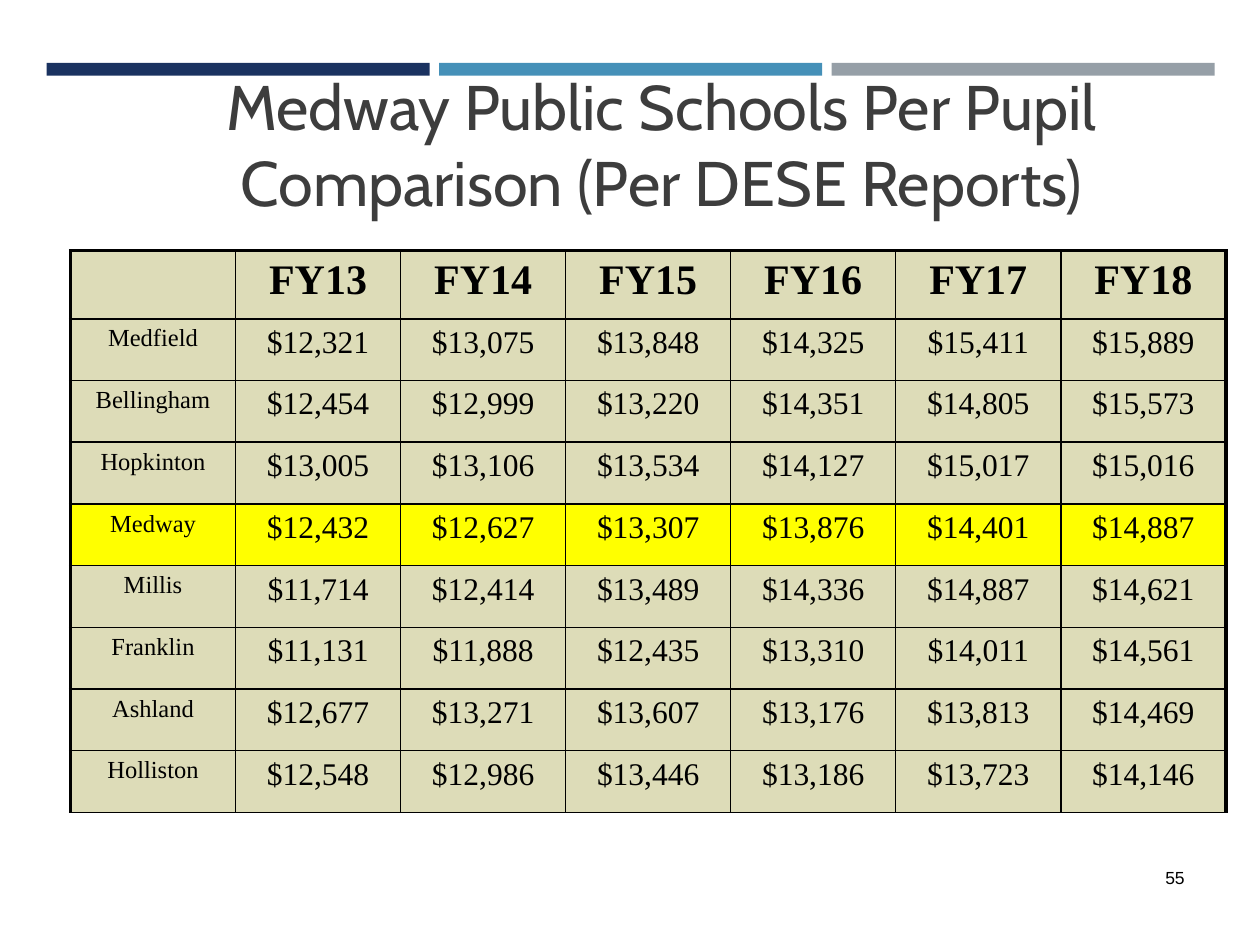
from pptx import Presentation
from pptx.dml.color import RGBColor
from pptx.enum.shapes import MSO_SHAPE
from pptx.enum.text import MSO_ANCHOR, MSO_AUTO_SIZE, PP_ALIGN
from pptx.oxml import parse_xml
from pptx.oxml.ns import nsdecls
from pptx.util import Inches, Pt

COLORS = {
    "navy": "1A3260", "blue": "4590B8", "gray": "969FA7", "title": "3D3D3D",
    "black": "000000", "cell": "DDDCB8", "highlight": "FFFF00",
}
YEARS = ["FY13", "FY14", "FY15", "FY16", "FY17", "FY18"]
SPENDING = {
    "Medfield": [12321, 13075, 13848, 14325, 15411, 15889],
    "Bellingham": [12454, 12999, 13220, 14351, 14805, 15573],
    "Hopkinton": [13005, 13106, 13534, 14127, 15017, 15016],
    "Medway": [12432, 12627, 13307, 13876, 14401, 14887],
    "Millis": [11714, 12414, 13489, 14336, 14887, 14621],
    "Franklin": [11131, 11888, 12435, 13310, 14011, 14561],
    "Ashland": [12677, 13271, 13607, 13176, 13813, 14469],
    "Holliston": [12548, 12986, 13446, 13186, 13723, 14146],
}


class SlideBuilder:
    title_font = "Cabin"
    table_font = "Times New Roman"
    number_font = "Arial"
    thin, thick = 1, 2.25

    def __init__(self, slide):
        self.slide = slide

    def color(self, name):
        return RGBColor.from_string(COLORS[name])

    def set_text(self, frame, text, font, size, color="black",
                 align=PP_ALIGN.CENTER, bold=False):
        paragraph = frame.paragraphs[0]
        paragraph.text = text
        paragraph.alignment = align
        for run in paragraph.runs:
            run.font.name = font
            run.font.size = Pt(size)
            run.font.bold = bold
            run.font.color.rgb = self.color(color)

    def bar(self, left, top, width, height, color):
        bar = self.slide.shapes.add_shape(
            MSO_SHAPE.RECTANGLE, Inches(left), Inches(top), Inches(width), Inches(height))
        bar.shadow.inherit = False
        bar.fill.solid()
        bar.fill.fore_color.rgb = self.color(color)
        bar.line.fill.background()

    def title(self, text, left, top, width, height):
        title = self.slide.shapes.title
        title.left, title.top = Inches(left), Inches(top)
        title.width, title.height = Inches(width), Inches(height)
        frame = title.text_frame
        frame.word_wrap = True
        frame.auto_size = MSO_AUTO_SIZE.NONE
        frame.vertical_anchor = MSO_ANCHOR.MIDDLE
        self.set_text(frame, text, self.title_font, 36, "title")

    def page_number(self, text, left, top, width, height):
        box = self.slide.shapes.add_textbox(
            Inches(left), Inches(top), Inches(width), Inches(height))
        box.text_frame.word_wrap = True
        self.set_text(box.text_frame, text, self.number_font, 10, align=PP_ALIGN.RIGHT)

    def borders(self, cell, widths):
        properties = cell._tc.get_or_add_tcPr()
        for side, width in zip("LRTB", widths):
            properties.append(parse_xml(
                f'<a:ln{side} {nsdecls("a")} w="{Pt(width)}"><a:solidFill>'
                f'<a:srgbClr val="{COLORS["black"]}"/></a:solidFill></a:ln{side}>'))

    def table(self, rows, left, top, column_width, header_height, row_height, highlight):
        row_count, column_count = len(rows), len(rows[0])
        table = self.slide.shapes.add_table(
            row_count, column_count, Inches(left), Inches(top),
            Inches(column_width * column_count),
            Inches(header_height + row_height * (row_count - 1))).table
        table.first_row = table.horz_banding = False
        for column in table.columns:
            column.width = Inches(column_width)
        for r, values in enumerate(rows):
            is_header = r == 0
            table.rows[r].height = Inches(header_height if is_header else row_height)
            for c, value in enumerate(values):
                cell = table.cell(r, c)
                size = 24 if is_header else 14 if c == 0 else 18
                self.set_text(cell.text_frame, value, self.table_font, size, bold=is_header)
                # Thick outer edge on the left, right and top
                self.borders(cell, [
                    self.thick if c == 0 else self.thin,
                    self.thick if c == column_count - 1 else self.thin,
                    self.thick if is_header else self.thin,
                    self.thin])
                cell.fill.solid()
                cell.fill.fore_color.rgb = self.color(
                    "highlight" if values[0] == highlight else "cell")


def main():
    presentation = Presentation()
    presentation.slide_width, presentation.slide_height = Inches(10), Inches(7.5)
    title_only = presentation.slide_layouts[5]
    builder = SlideBuilder(presentation.slides.add_slide(title_only))

    # Colour bars across the top
    for i, color in enumerate(["navy", "blue", "gray"]):
        builder.bar(0.37 + i * 3.115, 0.5, 3.04, 0.1, color)

    builder.title("Medway Public Schools Per Pupil Comparison (Per DESE Reports)",
                  1, 0.65, 8.5, 0.97)

    # Spending per pupil by town and year
    rows = [[""] + YEARS]
    rows += [[town] + [f"${amount:,}" for amount in amounts]
             for town, amounts in SPENDING.items()]
    builder.table(rows, 0.56, 1.99, 1.31, 0.54, 0.49, highlight="Medway")

    builder.page_number("55", 7.42, 6.83, 2.08, 0.5)
    presentation.save("out.pptx")


if __name__ == "__main__":
    main()
